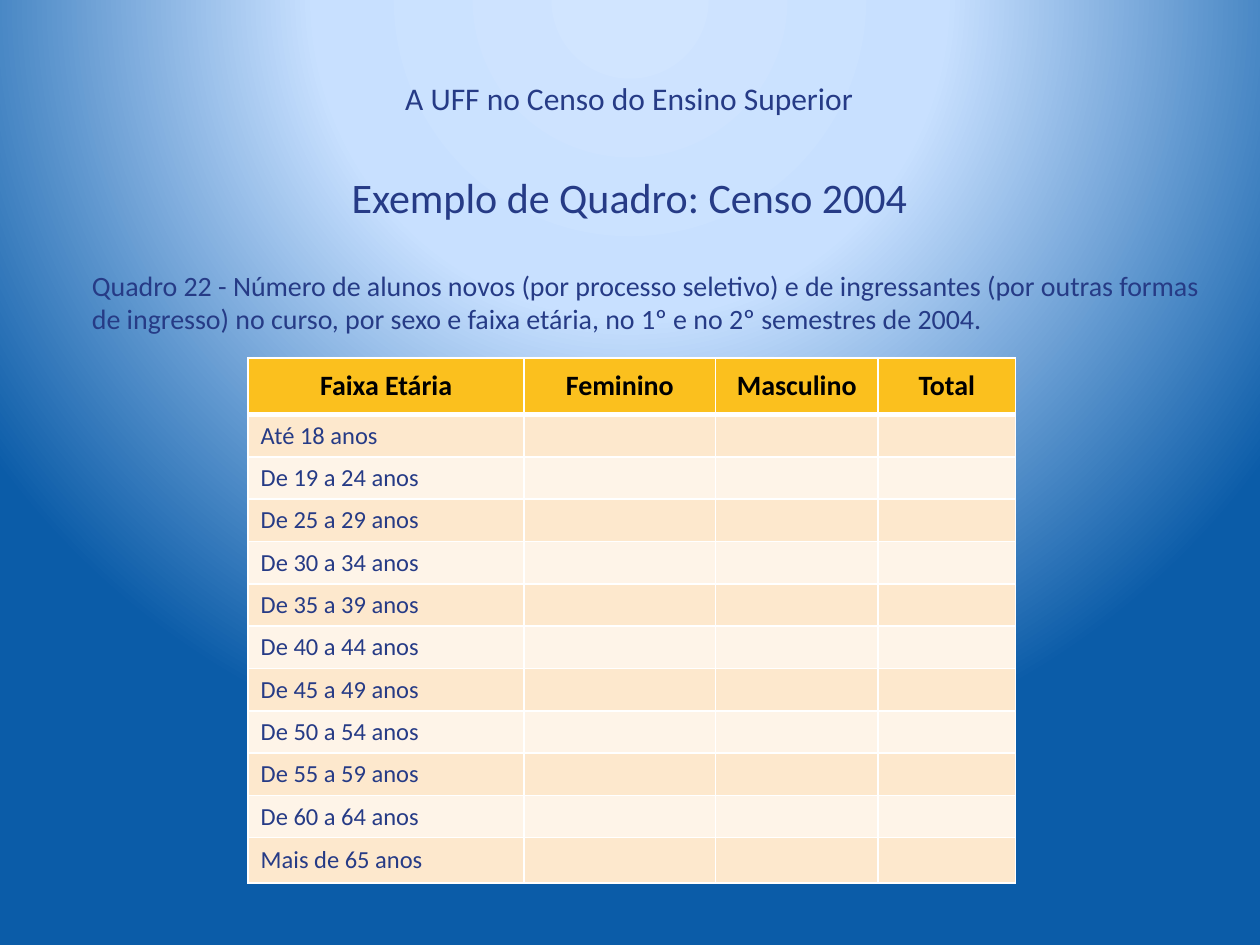
from pptx import Presentation
from pptx.dml.color import RGBColor
from pptx.enum.text import MSO_ANCHOR as Anchor, PP_ALIGN as Align
from pptx.oxml import parse_xml
from pptx.oxml.ns import nsdecls
from pptx.util import Pt

FONT = "Calibri"
NAVY = RGBColor(0x26, 0x3B, 0x86)
BLACK = RGBColor(0, 0, 0)
WHITE = RGBColor(0xFF, 0xFF, 0xFF)
GOLD = RGBColor(0xFB, 0xC0, 0x1E)
PEACH = RGBColor(0xFD, 0xE8, 0xCD)
CREAM = RGBColor(0xFE, 0xF4, 0xE8)
GLOW = [(0, RGBColor(0xD1, 0xE5, 0xFF)), (40, RGBColor(0xC8, 0xE0, 0xFF)),
        (100, RGBColor(0x0B, 0x5C, 0xA8))]

HEADINGS = ["Faixa Etária", "Feminino", "Masculino", "Total"]
AGE_BANDS = (["Até 18 anos"]
             + [f"De {first} a {last} anos" for first, last in
                [(19, 24)] + [(age, age + 4) for age in range(25, 65, 5)]]
             + ["Mais de 65 anos"])
COLUMN_WIDTHS = [157.7, 109.4, 92.9, 78.5]
HEADER_HEIGHT, ROW_HEIGHT, LAST_HEIGHT = 32.4, 24.2, 25.9


def paint_background(page):
    """Radial glow centred above the top edge of the page."""
    stops = "".join(f'<a:gs pos="{position * 1000}"><a:srgbClr val="{color}"/></a:gs>'
                    for position, color in GLOW)
    page.element.cSld.insert(0, parse_xml(
        f'<p:bg {nsdecls("p", "a")}><p:bgPr><a:gradFill rotWithShape="1">'
        f'<a:gsLst>{stops}</a:gsLst><a:path path="circle">'
        '<a:fillToRect l="50000" t="-80000" r="50000" b="180000"/></a:path>'
        '</a:gradFill><a:effectLst/></p:bgPr></p:bg>'))


def style_font(font, size, color, bold=False):
    font.name = FONT
    font.size = Pt(size)
    font.bold = bold
    font.color.rgb = color


def add_text(page, left, top, width, height, text, size,
             align=Align.CENTER, anchor=Anchor.BOTTOM):
    box = page.shapes.add_textbox(Pt(left), Pt(top), Pt(width), Pt(height))
    frame = box.text_frame
    frame.word_wrap = True
    frame.vertical_anchor = anchor
    para = frame.paragraphs[0]
    para.text = text
    para.alignment = align
    style_font(para.font, size, NAVY)


def add_borders(cell, bottom_width):
    properties = cell._tc.get_or_add_tcPr()
    sides = [("lnL", 1), ("lnR", 1), ("lnT", 1), ("lnB", bottom_width)]
    for index, (side, width) in enumerate(sides):
        properties.insert(index, parse_xml(
            f'<a:{side} {nsdecls("a")} w="{Pt(width)}"><a:solidFill>'
            f'<a:srgbClr val="{WHITE}"/></a:solidFill></a:{side}>'))


def fill_cell(cell, text, is_header, fill):
    cell.fill.solid()
    cell.fill.fore_color.rgb = fill
    cell.vertical_anchor = Anchor.MIDDLE
    add_borders(cell, 3 if is_header else 1)
    para = cell.text_frame.paragraphs[0]
    para.text = text
    para.alignment = Align.CENTER if is_header else Align.LEFT
    if is_header:
        style_font(para.font, 16, BLACK, bold=True)
    else:
        style_font(para.font, 14, NAVY)
    if not text:  # an empty cell takes its line height from the end mark
        para._p.append(parse_xml(f'<a:endParaRPr {nsdecls("a")} sz="1400"/>'))


def add_age_table(page, left, top):
    rows = [HEADINGS] + [[band, "", "", ""] for band in AGE_BANDS]
    heights = [HEADER_HEIGHT] + [ROW_HEIGHT] * (len(AGE_BANDS) - 1) + [LAST_HEIGHT]
    table = page.shapes.add_table(len(rows), len(HEADINGS), Pt(left), Pt(top),
                                  Pt(sum(COLUMN_WIDTHS)), Pt(sum(heights))).table
    for column, width in zip(table.columns, COLUMN_WIDTHS):
        column.width = Pt(width)
    for index, (texts, height) in enumerate(zip(rows, heights)):
        table.rows[index].height = Pt(height)
        fill = GOLD if index == 0 else PEACH if index % 2 else CREAM
        for cell, text in zip(table.rows[index].cells, texts):
            fill_cell(cell, text, index == 0, fill)


def main():
    deck = Presentation()
    deck.slide_width, deck.slide_height = Pt(720), Pt(540)
    page = deck.slides.add_slide(deck.slide_layouts[6])
    paint_background(page)
    add_text(page, 149, 41.8, 421.2, 28.8, "A UFF no Censo do Ensino Superior", 18,
             anchor=Anchor.TOP)
    add_text(page, 45.4, 154.8, 654.5, 40.3,
             "Quadro 22 - Número de alunos novos (por processo seletivo) e de "
             "ingressantes (por outras formas de ingresso) no curso, por sexo e "
             "faixa etária, no 1º e no 2º semestres de 2004.", 16, align=Align.LEFT)
    add_age_table(page, 141.8, 204.5)
    add_text(page, 32.4, 92.2, 654.5, 38.2, "Exemplo de Quadro: Censo 2004", 24)
    deck.save("out.pptx")


if __name__ == "__main__":
    main()
